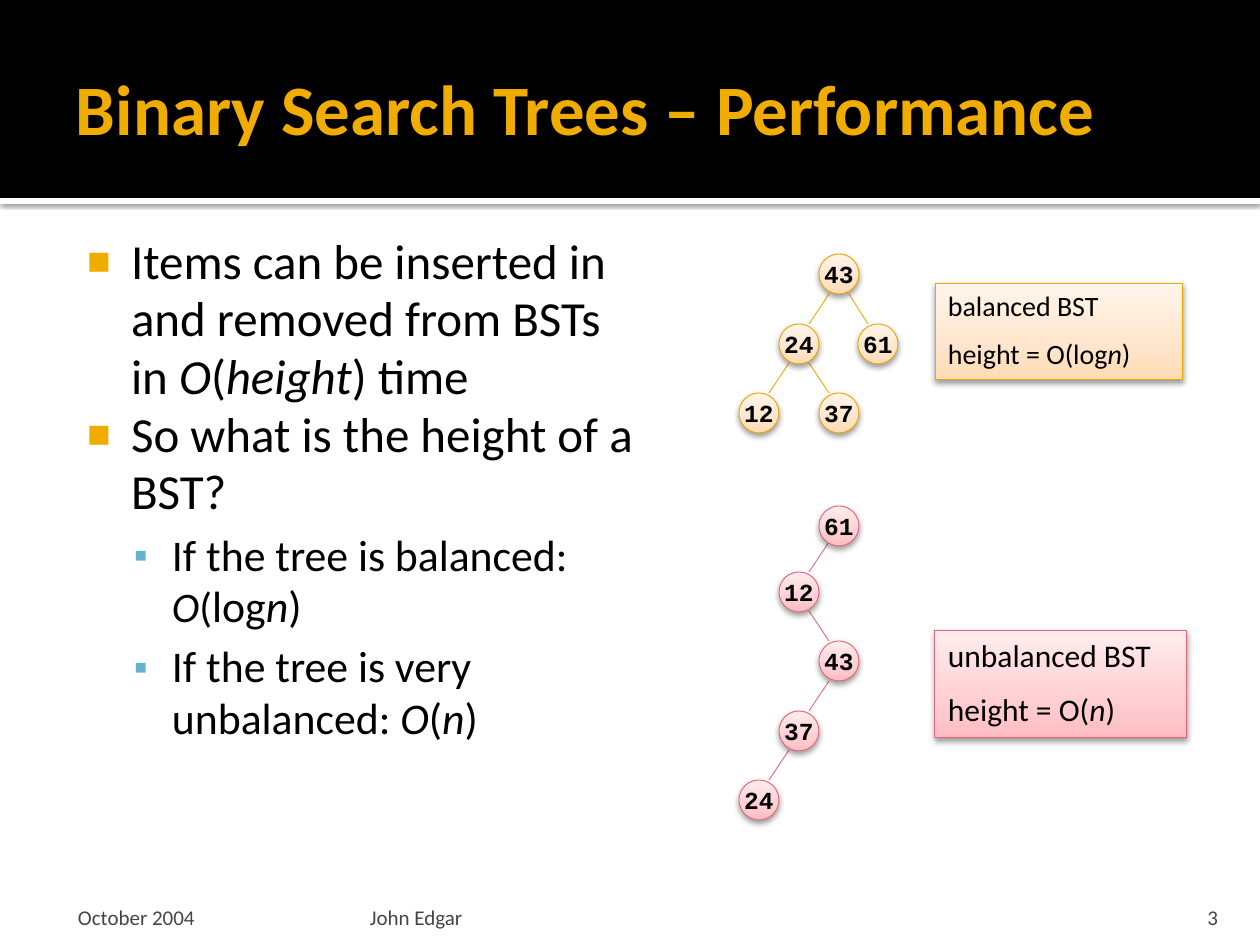
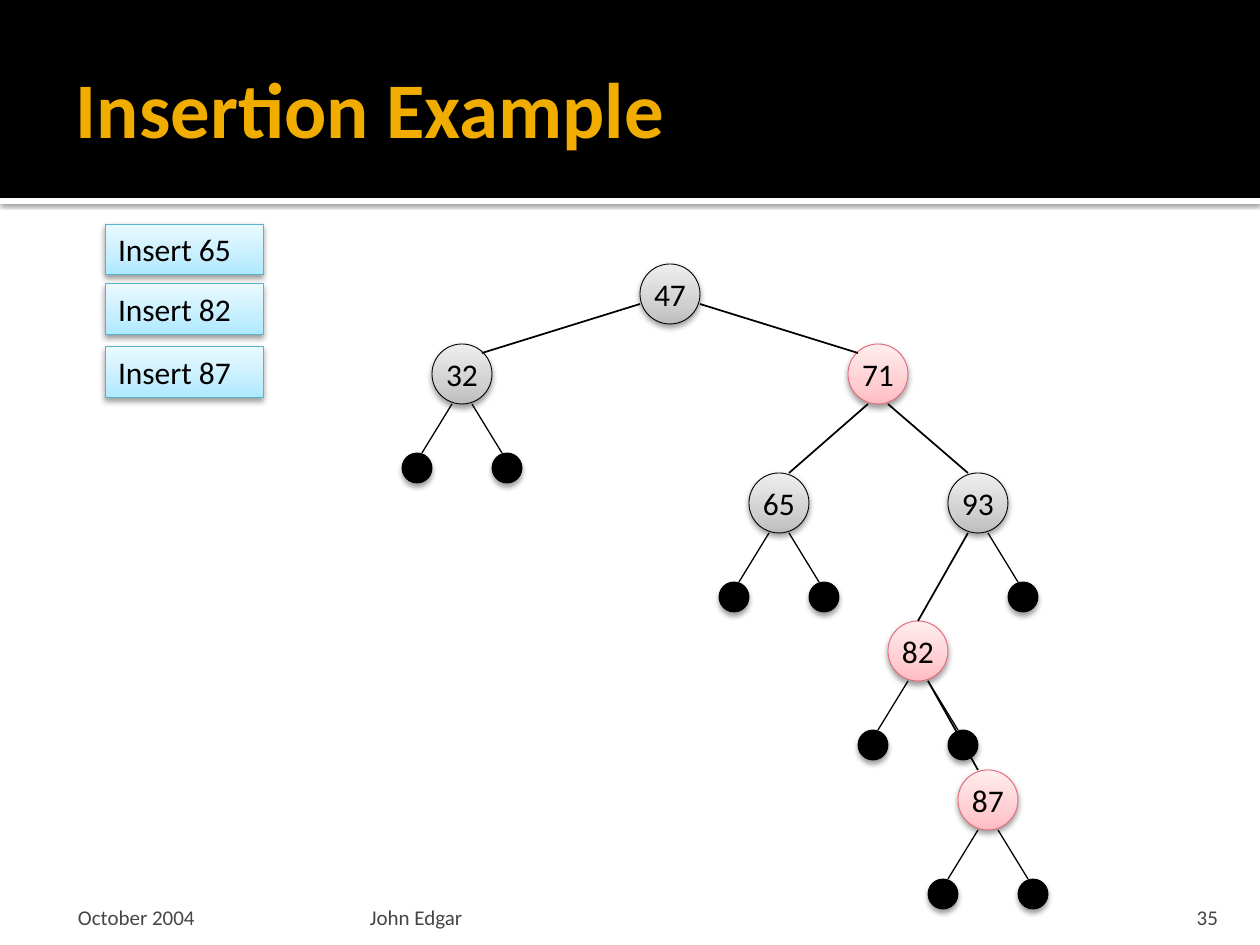
"""Build two slides on binary search trees: performance and insertion."""
from copy import deepcopy

from lxml import etree
from pptx import Presentation
from pptx import util as u
from pptx.dml.color import RGBColor
from pptx.enum import shapes, text
from pptx.oxml.ns import qn

PX = 914400 / 126
BLACK = RGBColor(0, 0, 0)
WHITE = RGBColor(255, 255, 255)
GOLD = RGBColor(0xF0, 0xAD, 0x00)
TEAL = RGBColor(0x60, 0xB5, 0xCC)
FOOTER_GREY = RGBColor(0x45, 0x45, 0x45)
GOLD_LINE = RGBColor(0xEB, 0xA9, 0x00)
RED_LINE = RGBColor(0xE4, 0x67, 0x78)
BLUE_LINE = RGBColor(0x5B, 0xB3, 0xCA)


def shades(*codes):
    return [RGBColor.from_string(code) for code in codes]


ORANGE = (shades("FFDBB5", "FFE5CB", "FFF5EB"), GOLD_LINE)
RED = (shades("FFBCC2", "FFCFD3", "FFEDEE"), RED_LINE)
GREY = (shades("BDBDBD", "D1D1D1", "EEEEEE"), BLACK)
BLUE = (shades("ADE9FF", "C5EFFF", "E9F9FF"), BLUE_LINE)
STOPS = (0, 0.35, 1)

BODY_FONT, CODE_FONT = "Calibri", "Courier New"
LEFT, CENTER, RIGHT = text.PP_ALIGN.LEFT, text.PP_ALIGN.CENTER, text.PP_ALIGN.RIGHT
TOP, MIDDLE, BOTTOM = text.MSO_ANCHOR.TOP, text.MSO_ANCHOR.MIDDLE, text.MSO_ANCHOR.BOTTOM
OVAL, RECTANGLE = shapes.MSO_SHAPE.OVAL, shapes.MSO_SHAPE.RECTANGLE

BULLETS = [
    (0, [("Items can be inserted in and removed from BSTs in ",), ("O", True), ("(",),
         ("height", True), (") time",)]),
    (0, [("So what is the height of a BST?",)]),
    (1, [("If the tree is balanced: ",), ("O", True, 24), ("(", False, 24), ("log",),
         ("n", True), (")",)]),
    (1, [("If the tree is very unbalanced: ",), ("O", True), ("(",), ("n", True), (")",)]),
]
LEVELS = [
    dict(size=28, before=0, margin=60, hang=44, mark="■", color=GOLD, scale=80),
    dict(size=25, before=5, margin=101, hang=38, mark="▪", color=TEAL, scale=90),
]

SMALL_TREES = [
    (ORANGE, {43: (819, 254), 24: (779, 324), 61: (858, 324), 12: (739, 393), 37: (819, 393)},
     [(43, 24), (43, 61), (24, 12), (24, 37)]),
    (RED, {61: (819, 506), 12: (779, 572), 43: (819, 641), 37: (779, 711), 24: (739, 780)},
     [(61, 12), (12, 43), (43, 37), (37, 24)]),
]
CAPTIONS = [
    (ORANGE, (935, 283, 248, 97), 16,
     [[("balanced BST",)], [("height = O(log",), ("n", True), (")",)]]),
    (RED, (935, 630, 252, 108), 18,
     [[("unbalanced BST",)], [("height = O(",), ("n", True), (")",)]]),
]

BIG_TREE = {
    47: (GREY, 640, 264), 32: (GREY, 432, 344), 71: (RED, 848, 344), 65: (GREY, 749, 473),
    93: (GREY, 948, 473), 82: (RED, 888, 621), 87: (RED, 958, 770),
}
BRANCHES = [
    (47, 32, (-30, 40), (20, 9)), (47, 71, (30, 40), (-20, 9)),
    (71, 65, (-10, 60), (10, 0)), (71, 93, (10, 60), (-10, 0)),
    (93, 82, (-10, 60), (0, 0)), (82, 87, (10, 60), (-10, 0)),
]
LEAF_SIDES = {32: (-1, 1), 65: (-1, 1), 93: (1,), 82: (-1, 1), 87: (-1, 1)}
INSERTIONS = [("Insert 65", 224), ("Insert 82", 284), ("Insert 87", 347)]

SMALL_NODE, BIG_NODE, LEAF = 40, 60, 30
LEAF_DROP = 49


def px(value):
    return u.Emu(round(value * PX))


def write(frame, paragraphs, size, color=BLACK, font=BODY_FONT, bold=False, align=LEFT,
          anchor=TOP, insets=(13, 6, 13, 6), wrap=True):
    """Fill a text frame with paragraphs, each a list of (text, italic, size) spans."""
    frame.auto_size = text.MSO_AUTO_SIZE.NONE
    frame.word_wrap = wrap
    frame.vertical_anchor = anchor
    (frame.margin_left, frame.margin_top,
     frame.margin_right, frame.margin_bottom) = map(px, insets)
    for index, spans in enumerate(paragraphs):
        para = frame.add_paragraph() if index else frame.paragraphs[0]
        para.alignment = align
        para.space_before = u.Pt(size / 2 if index else 0)
        for words, italic, own_size in ((*span, False, None)[:3] if len(span) == 1
                                        else (*span, None)[:3] for span in spans):
            run = para.add_run()
            run.text = words
            run.font.name = font
            run.font.size = u.Pt(own_size or size)
            run.font.bold = bold
            run.font.italic = italic
            run.font.color.rgb = color


def cast_shadow(shape, opacity=38, blur=3.5, distance=2):
    shape.shadow.inherit = False
    effects = shape._element.spPr.find(qn("a:effectLst"))
    outer = etree.SubElement(effects, qn("a:outerShdw"), blurRad=str(u.Pt(blur)),
                             dist=str(u.Pt(distance)), dir="5400000", rotWithShape="0")
    color = etree.SubElement(outer, qn("a:srgbClr"), val=str(BLACK))
    etree.SubElement(color, qn("a:alpha"), val=str(opacity * 1000))


def add_plain(page, kind, frame, fill):
    shape = page.shapes.add_shape(kind, *map(px, frame))
    shape.shadow.inherit = False
    shape.fill.solid()
    shape.fill.fore_color.rgb = fill
    shape.line.fill.background()
    return shape


def add_shaded(page, kind, frame, theme):
    colors, outline = theme
    shape = page.shapes.add_shape(kind, *map(px, frame))
    shape.fill.gradient()
    shape.fill.gradient_angle = 90
    stop_list = shape._element.spPr.find(".//" + qn("a:gsLst"))
    stop_list.append(deepcopy(stop_list[0]))
    for stop, position, color in zip(shape.fill.gradient_stops, STOPS, colors):
        stop.position = position
        stop.color.rgb = color
    shape.line.color.rgb = outline
    shape.line.width = u.Pt(0.5)
    cast_shadow(shape)
    return shape


def add_line(page, start, end, color, width):
    line = page.shapes.add_connector(shapes.MSO_CONNECTOR.STRAIGHT, *map(px, (*start, *end)))
    line.line.color.rgb = color
    line.line.width = u.Pt(width)
    etree.SubElement(line._element.spPr, qn("a:effectLst"))


def add_node(page, key, left, top, side, theme, **style):
    node = add_shaded(page, OVAL, (left, top, side, side), theme)
    write(node.text_frame, [[(str(key),)]], align=CENTER, anchor=MIDDLE,
          insets=(0, 0, 0, 0), wrap=False, **style)


def place(shape, *frame):
    shape.left, shape.top, shape.width, shape.height = map(px, frame)


def add_bands(deck, page):
    """Put the black title band and the white strip on the master."""
    strip = add_plain(page, RECTANGLE, (0, 198, 1260, 6), WHITE)
    cast_shadow(strip, 60, 2.5, 0.8)
    band = add_plain(page, RECTANGLE, (0, 0, 1260, 198), BLACK)
    for index, shape in enumerate((strip, band)):
        deck.slide_master.shapes._spTree.insert(2 + index, shape._element)


def add_page(deck, layout, title, title_size, number):
    page = deck.slides.add_slide(deck.slide_layouts[layout])
    place(page.shapes.title, 63, 21, 1134, 173)
    write(page.shapes.title.text_frame, [[(title,)]], title_size, GOLD, bold=True,
          anchor=MIDDLE, insets=(13, 6, 6, 6))
    footers = [
        ("October 2004", 63, 294, LEFT, (15, 6, 6, 0)),
        ("John Edgar", 364, 758, LEFT, (6, 6, 6, 0)),
        (number, 1130, 101, RIGHT, (13, 6, 13, 0)),
    ]
    for words, left, width, align, insets in footers:
        box = page.shapes.add_textbox(*map(px, (left, 892, width, 38)))
        write(box.text_frame, [[(words,)]], 12, FOOTER_GREY, align=align, anchor=BOTTOM,
              insets=insets)
    return page


def add_bullets(body):
    place(body, 63, 220, 597, 624)
    write(body.text_frame, [spans for _, spans in BULLETS], LEVELS[0]["size"],
          insets=(8, 13, 13, 6))
    for para, (depth, spans) in zip(body.text_frame.paragraphs, BULLETS):
        level = LEVELS[depth]
        para.level = depth
        para.line_spacing = 0.98
        para.space_before = u.Pt(level["before"])
        for run, span in zip(para.runs, spans):
            run.font.size = u.Pt(span[2] if len(span) > 2 else level["size"])
        props = para._p.get_or_add_pPr()
        props.set("marL", str(px(level["margin"])))
        props.set("indent", str(-px(level["hang"])))
        color = etree.SubElement(props, qn("a:buClr"))
        etree.SubElement(color, qn("a:srgbClr"), val=str(level["color"]))
        etree.SubElement(props, qn("a:buSzPct"), val=str(level["scale"] * 1000))
        etree.SubElement(props, qn("a:buChar"), char=level["mark"])


def add_small_tree(page, theme, nodes, edges):
    half = SMALL_NODE / 2
    for parent, child in edges:
        parent_left, child_left, child_top = nodes[parent][0], *nodes[child]
        lean = 10 if child_left > parent_left else -10
        add_line(page, (parent_left + half + lean, child_top - 30),
                 (child_left + half - lean, child_top), theme[1], 0.5)
    for key, (left, top) in nodes.items():
        add_node(page, key, left, top, SMALL_NODE, theme, size=14, font=CODE_FONT, bold=True)


def add_big_tree(page):
    def point(key, offset):
        _, left, top = BIG_TREE[key]
        return left + BIG_NODE / 2 + offset[0], top + offset[1]

    for key, (theme, left, top) in BIG_TREE.items():
        add_node(page, key, left, top, BIG_NODE, theme, size=18)
    for parent, child, leave, arrive in BRANCHES:
        add_line(page, point(parent, leave), point(child, arrive), BLACK, 1)
    for key, sides in LEAF_SIDES.items():
        for side in sides:
            end = point(key, (40 * side, BIG_NODE + LEAF_DROP))
            add_line(page, point(key, (10 * side, BIG_NODE)), end, BLACK, 0.75)
            left = end[0] + 5 * side - LEAF / 2
            leaf = add_plain(page, OVAL, (left, end[1], LEAF, LEAF), BLACK)
            leaf.line.color.rgb = BLACK
            leaf.line.width = u.Pt(0.5)
            cast_shadow(leaf, blur=3.1)


def main():
    deck = Presentation()
    deck.slide_width, deck.slide_height = px(1260), px(945)

    performance = add_page(deck, 1, "Binary Search Trees – Performance", 40.5, "3")
    add_bands(deck, performance)
    add_bullets(performance.placeholders[1])
    for theme, nodes, edges in SMALL_TREES:
        add_small_tree(performance, theme, nodes, edges)
    for theme, frame, size, paragraphs in CAPTIONS:
        caption = add_shaded(performance, RECTANGLE, frame, theme)
        write(caption.text_frame, paragraphs, size)

    insertion = add_page(deck, 5, "Insertion Example", 45, "35")
    add_big_tree(insertion)
    for words, top in INSERTIONS:
        label = add_shaded(insertion, RECTANGLE, (105, top, 158, 51), BLUE)
        write(label.text_frame, [[(words,)]], 18)

    deck.save("out.pptx")


if __name__ == "__main__":
    main()
